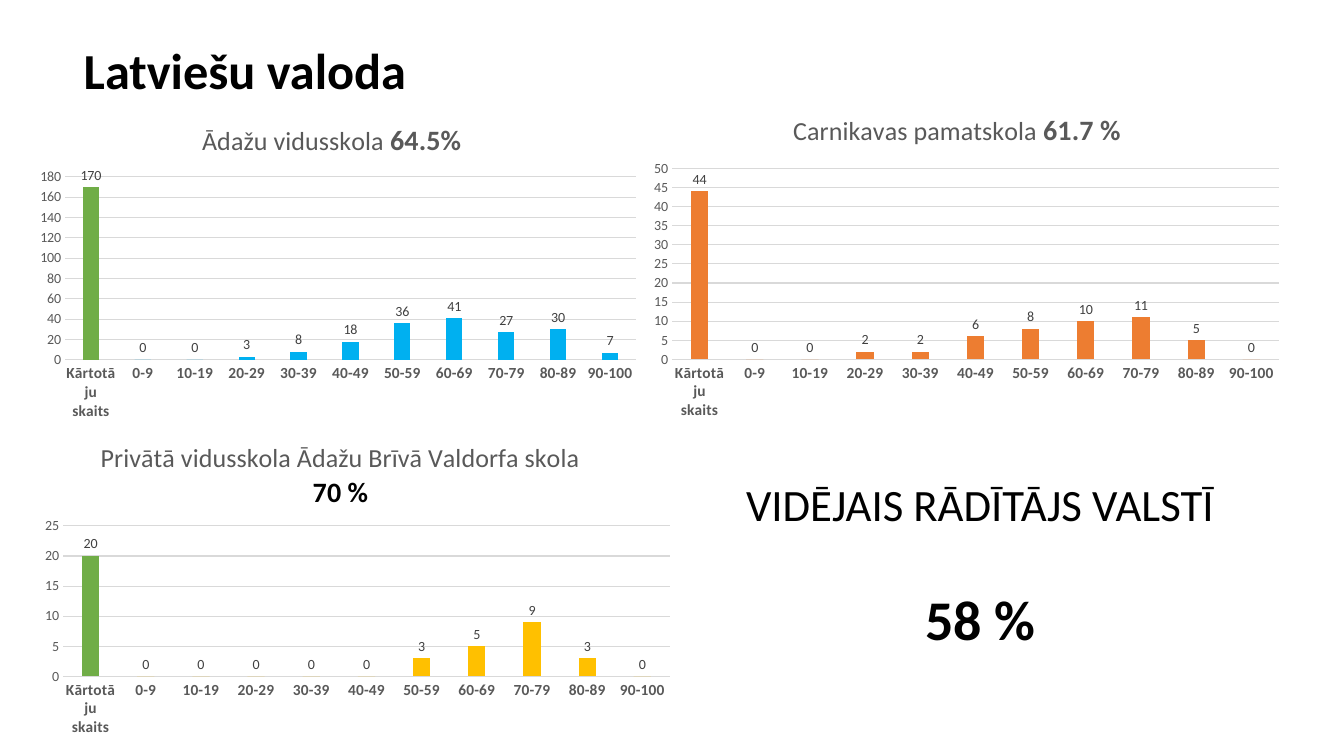
import pptx
import pptx.chart.data
import pptx.dml.color
import pptx.enum.chart
import pptx.enum.text
import pptx.oxml
import pptx.oxml.ns
import pptx.util
from dataclasses import dataclass

Pt = pptx.util.Pt
qn = pptx.oxml.ns.qn


@dataclass(frozen=True)
class Theme:
    font: str = "Calibri"
    black: str = "000000"
    axis: str = "595959"
    label: str = "404040"
    grid: str = "D9D9D9"
    green: str = "70AD47"
    blue: str = "00B0F0"
    orange: str = "ED7D31"
    yellow: str = "FFC000"
    heading_size: float = 36
    caption_size: float = 32
    average_size: float = 40
    school_size: float = 18.6
    percent_size: float = 20
    category_size: float = 11
    value_size: float = 10


THEME = Theme()
SCORE_BANDS = ["Kārtotāju skaits", "0-9", "10-19", "20-29", "30-39", "40-49",
               "50-59", "60-69", "70-79", "80-89", "90-100"]

# Frames and plots are left, top, width, height; title_at is left, top
SCHOOLS = [
    dict(school="Ādažu vidusskola ", percent="64.5%",
         counts=[170, 0, 0, 3, 8, 18, 36, 41, 27, 30, 7],
         color=THEME.blue, first_color=THEME.green, top_value=180, step=20,
         frame=(20.2, 75.6, 442.8, 229), plot=(46.4, 126.4, 407.9, 130.7),
         title_at=(142.2, 84.4)),
    dict(school="Carnikavas pamatskola ", percent="61.7 %",
         counts=[44, 0, 0, 2, 2, 6, 8, 10, 11, 5, 0],
         color=THEME.orange, first_color=THEME.orange, top_value=50, step=5,
         frame=(457.9, 69.8, 465.1, 235.4), plot=(480, 120.4, 433.6, 136.4),
         title_at=(564.4, 77.5)),
    dict(school="Privātā vidusskola Ādažu Brīvā Valdorfa skola", percent="70 %",
         counts=[20, 0, 0, 0, 0, 0, 3, 5, 9, 3, 0],
         color=THEME.yellow, first_color=THEME.green, top_value=25, step=5,
         frame=(23, 301.7, 465.1, 229), plot=(45, 375.7, 433.6, 107.5),
         title_at=(69.8, 312.2), percent_below=True, percent_color=THEME.black),
]


def rgb(code):
    return pptx.dml.color.RGBColor.from_string(code)


def format_font(font, size, color, bold=False):
    font.name = THEME.font
    font.size = Pt(size)
    font.bold = bold
    font.color.rgb = rgb(color)


def add_text(frame, text, size, color=THEME.black, bold=False, align=None,
             new_paragraph=False, space_before=None):
    paragraph = frame.add_paragraph() if new_paragraph else frame.paragraphs[-1]
    if align is not None:
        paragraph.alignment = align
    if space_before is not None:
        paragraph.space_before = Pt(space_before)
    run = paragraph.add_run()
    run.text = text
    format_font(run.font, size, color, bold)


def set_layout(parent, index, fractions, inner=False):
    """Place a chart part by fractions of the chart frame."""
    for old in parent.findall(qn("c:layout")):
        parent.remove(old)
    target = '<c:layoutTarget val="inner"/>' if inner else ""
    modes = "".join(f'<c:{key}Mode val="edge"/>' for key in "xy")
    values = "".join(f'<c:{key} val="{value:.4f}"/>'
                     for key, value in zip("xywh", fractions))
    parent.insert(index, pptx.oxml.parse_xml(
        f'<c:layout {pptx.oxml.ns.nsdecls("c")}><c:manualLayout>'
        f'{target}{modes}{values}</c:manualLayout></c:layout>'))


def add_school_chart(slide, number, school, percent, counts, color, first_color,
                     top_value, step, frame, plot, title_at,
                     percent_below=False, percent_color=THEME.axis):
    # Each school fills the series with its own number
    data = pptx.chart.data.CategoryChartData()
    data.categories = SCORE_BANDS
    for position in range(1, number + 1):
        data.add_series(f"Series {position}", counts if position == number else [])
    chart = slide.shapes.add_chart(
        pptx.enum.chart.XL_CHART_TYPE.COLUMN_CLUSTERED,
        *map(Pt, frame), data).chart
    chart.has_legend = False
    format_font(chart.font, THEME.value_size, THEME.black)

    # School name and its result
    center = pptx.enum.text.PP_ALIGN.CENTER
    heading = chart.chart_title.text_frame
    add_text(heading, school, THEME.school_size, THEME.axis, align=center)
    add_text(heading, percent, THEME.percent_size, percent_color, bold=True,
             align=center, new_paragraph=percent_below)
    chart.chart_title.include_in_layout = False

    # Axes
    bands, scale = chart.category_axis, chart.value_axis
    format_font(bands.tick_labels.font, THEME.category_size, THEME.axis, True)
    format_font(scale.tick_labels.font, THEME.value_size, THEME.axis)
    for axis in (bands, scale):
        axis.major_tick_mark = pptx.enum.chart.XL_TICK_MARK.NONE
        axis.minor_tick_mark = pptx.enum.chart.XL_TICK_MARK.NONE
    scale.minimum_scale, scale.maximum_scale = 0, top_value
    scale.major_unit = step
    scale.has_major_gridlines = True
    scale.format.line.fill.background()
    for line in (bands.format.line, scale.major_gridlines.format.line):
        line.color.rgb = rgb(THEME.grid)
        line.width = Pt(0.75)

    # Columns and their labels
    columns = chart.plots[0]
    columns.vary_by_categories = False
    columns.gap_width, columns.overlap = 219, -27
    *unused, pupils = columns.series
    for series in unused:
        # A series without values takes no room beside the columns
        series._element.remove(series._element.find(qn("c:val")))
    for part, fill_color in ((pupils, color), (pupils.points[0], first_color)):
        part.format.fill.solid()
        part.format.fill.fore_color.rgb = rgb(fill_color)
    labels = pupils.data_labels
    labels.show_value = True
    labels.position = pptx.enum.chart.XL_LABEL_POSITION.OUTSIDE_END
    format_font(labels.font, THEME.value_size, THEME.label)

    # Places inside the frame
    left, top, width, height = frame

    def fractions(x, y, *size):
        return ((x - left) / width, (y - top) / height,
                *(part / whole for part, whole in zip(size, (width, height))))

    area = chart.element.find(".//" + qn("c:plotArea"))
    title = chart.element.find(".//" + qn("c:title"))
    set_layout(area, 0, fractions(*plot), inner=True)
    set_layout(title, 1, fractions(*title_at))


def add_heading(slide, text):
    title = slide.shapes.title
    title.left, title.top, title.width, title.height = map(Pt, (52.6, 0, 828, 104.4))
    title.text_frame.vertical_anchor = pptx.enum.text.MSO_ANCHOR.MIDDLE
    add_text(title.text_frame, text, THEME.heading_size, bold=True,
             align=pptx.enum.text.PP_ALIGN.LEFT)
    title.text_frame.paragraphs[0].line_spacing = 0.9


def add_national_average(slide, caption, average):
    center = pptx.enum.text.PP_ALIGN.CENTER
    frame = slide.shapes.add_textbox(*map(Pt, (515.2, 337, 370, 133.2))).text_frame
    frame.word_wrap = True
    add_text(frame, caption, THEME.caption_size, align=center)
    add_text(frame, average, THEME.average_size, bold=True, align=center,
             new_paragraph=True, space_before=38.5)


def main():
    deck = pptx.Presentation()
    deck.slide_width, deck.slide_height = Pt(960), Pt(540)
    slide = deck.slides.add_slide(deck.slide_layouts.get_by_name("Title Only"))
    add_heading(slide, "Latviešu valoda")
    for number, school in enumerate(SCHOOLS, start=1):
        add_school_chart(slide, number, **school)
    add_national_average(slide, "VIDĒJAIS RĀDĪTĀJS VALSTĪ", "58 %")
    deck.save("out.pptx")


if __name__ == "__main__":
    main()
